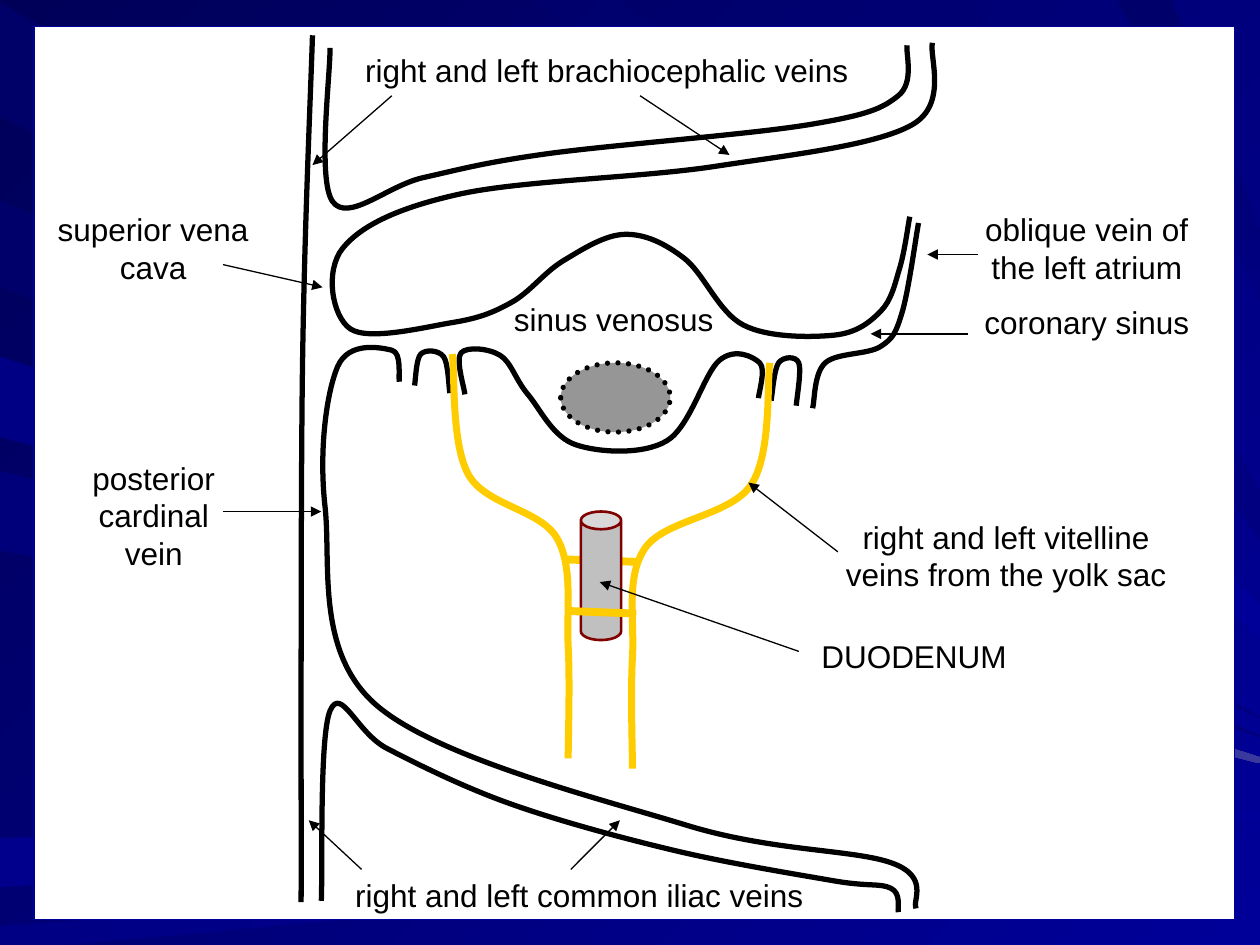
import pptx
import pptx.dml.color
import pptx.enum.dml
import pptx.enum.shapes
import pptx.enum.text
import pptx.oxml
import pptx.oxml.ns
import pptx.util
from pptx.util import Inches

SHAPE = pptx.enum.shapes.MSO_SHAPE
PAGE_BOX = (0, 0, 10, 7.5)
PANEL_BOX = (0.27, 0.21, 9.53, 7.09)
BLACK, VITELLINE = "000000", "FFCC00"

RAYS = [
    ("000069", "000080", 0, [(0, 0.02), (0, 0.93), (10, 5.7), (10, 5.69)]),
    ("00008C", "000099", 0, [(0, 6.65), (0, 7.04), (10, 6.51), (10, 6.43)]),
    ("000085", "000099", 0, [(0, 7.35), (0, 7.5), (0.54, 7.5), (10, 6.62)]),
    ("00006B", "000080", 0, [(0, 1.59), (0, 2.28), (10, 5.85), (10, 5.84)]),
    ("00006D", "000099", 45, [(4.26, 0), (4.92, 0), (10, 4.79), (10, 5.07)]),
    ("00006B", "000080", 90, [(8.87, 0), (9.3, 0), (10, 1.83), (10, 2.37)]),
    ("00007B", "000099", 45, [(0, 3.74), (0, 4.37), (10, 6.06), (10, 6.05)]),
    ("000073", "000080", 90, [(6.86, 0), (7.7, 0), (10, 3.9), (10, 4.28)]),
    ("000085", "39399E", 0, [(0, 2.83), (0, 3.47), (10, 6.06), (10, 6.01)]),
]

VESSEL_WALLS = [
    [(7.4, 0.34), (7.24, 0.99), (5.68, 1.32), (3.65, 1.54), (2.72, 1.97), (2.78, 2.61),
     (3.59, 2.56), (4.06, 2.4), (4.47, 2.07), (4.96, 1.86), (5.43, 2.05), (5.9, 2.58),
     (6.62, 2.66), (6.99, 2.47), (7.14, 2.13), (7.22, 1.72)],
    [(7.27, 7.21), (7.08, 6.85), (5.45, 6.55), (2.98, 5.59), (2.58, 4.02), (2.68, 2.91),
     (3.11, 2.78), (3.17, 3.03)],
    [(3.29, 3.06), (3.34, 2.81), (3.52, 2.83), (3.57, 3.12)],
    [(3.69, 3.13), (3.66, 2.8), (3.97, 2.82), (4.19, 3.13), (4.57, 3.53), (5.29, 3.5),
     (5.71, 2.86), (6.03, 2.88), (6.02, 3.16)],
    [(6.12, 3.18), (6.18, 2.88), (6.34, 2.88), (6.32, 3.22)],
    [(6.45, 3.24), (6.55, 2.88), (6.99, 2.75), (7.16, 2.48), (7.29, 1.77)],
    [(2.48, 0.28), (2.4, 2.96), (2.39, 7.16)],
    [(2.62, 0.38), (2.64, 1.6), (3.36, 1.41), (4.35, 1.22), (6.42, 0.99), (7.13, 0.76),
     (7.2, 0.36)],
    [(2.55, 7.15), (2.62, 5.64), (3.07, 5.94), (4.05, 6.38), (5.35, 6.75), (6.61, 6.99),
     (7.07, 7.05), (7.13, 7.24)],
]
LEFT_VITELLINE = [(4.51, 6.02), (4.51, 5.13), (4.42, 4.27), (3.72, 3.77), (3.59, 2.81)]
RIGHT_VITELLINE = [(5.02, 6.1), (5.02, 5.21), (5.12, 4.35), (5.96, 3.85), (6.11, 2.88)]

LABELS = [
    (["sinus venosus"], (3.98, 2.33, 1.89, 0.4), False),
    (["right and left brachiocephalic veins"], (2.8, 0.36, 4.1, 0.4), False),
    (["superior vena cava"], (0.27, 1.62, 1.89, 0.7), True),
    (["right and left common iliac veins"], (2.72, 6.9, 3.94, 0.4), False),
    (["oblique vein of the left atrium", "coronary sinus"], (7.6, 1.62, 2.05, 1.15), True),
    (["posterior\vcardinal vein"], (0.59, 3.59, 1.26, 1), True),
    (["right and left vitelline veins from the yolk sac"], (6.57, 4.06, 2.83, 0.7), True),
    (["DUODENUM"], (6.42, 5.01, 1.81, 0.4), False),
]
POINTERS = [
    (5.08, 0.76, 5.79, 1.23), (3.11, 0.76, 2.48, 1.31), (1.77, 2.1, 2.56, 2.28),
    (2.87, 6.9, 2.45, 6.51), (4.53, 6.9, 4.92, 6.51), (7.76, 2.02, 7.36, 2.02),
    (7.68, 2.65, 6.91, 2.65), (1.77, 4.06, 2.55, 4.06), (6.34, 5.17, 4.76, 4.62),
    (6.65, 4.38, 5.94, 3.83),
]


def colour(value):
    return pptx.dml.color.RGBColor.from_string(value)


def set_gradient(fill, first, last, angle):
    fill.gradient()
    fill.gradient_angle = 360 - angle
    for stop, value, position in zip(fill.gradient_stops, (first, last), (0, 1)):
        stop.color.rgb = colour(value)
        stop.position = position


def set_line(line, value, width):
    line.color.rgb = colour(value)
    line.width = pptx.util.Pt(width)


def add_outline(page, box, points, closed):
    places = [(Inches(box[0] + x), Inches(box[1] + y)) for x, y in points]
    builder = page.shapes.build_freeform(*places[0])
    builder.add_line_segments(places[1:], close=closed)
    shape = builder.convert_to_shape()
    shape.shadow.inherit = False
    return shape


def smooth_points(knots):
    padded = [knots[0], *knots, knots[-1]]
    points = [knots[0]]
    for before, start, end, after in zip(padded, padded[1:], padded[2:], padded[3:]):
        points.append(tuple(s + (e - b) / 6 for b, s, e in zip(before, start, end)))
        points.append(tuple(e - (a - s) / 6 for s, e, a in zip(start, end, after)))
        points.append(end)
    return points


def add_curve(page, box, knots, value, width):
    shape = add_outline(page, box, smooth_points(knots), False)
    shape.fill.background()
    set_line(shape.line, value, width)
    outline = shape.element.find(".//" + pptx.oxml.ns.qn("a:path"))
    segments = outline.findall(pptx.oxml.ns.qn("a:lnTo"))
    for start in range(0, len(segments), 3):
        curve = outline.makeelement(pptx.oxml.ns.qn("a:cubicBezTo"))
        outline.append(curve)
        for segment in segments[start:start + 3]:
            curve.append(segment[0])
            outline.remove(segment)


def add_line(page, box, ends, value, width, arrow=False):
    x1, y1, x2, y2 = ends
    line = page.shapes.add_connector(
        pptx.enum.shapes.MSO_CONNECTOR.STRAIGHT,
        Inches(box[0] + x1), Inches(box[1] + y1), Inches(box[0] + x2), Inches(box[1] + y2))
    set_line(line.line, value, width)
    properties = line.element.spPr
    if arrow:
        head = properties.makeelement(pptx.oxml.ns.qn("a:tailEnd"), {"type": "triangle"})
        properties.find(pptx.oxml.ns.qn("a:ln")).append(head)
    properties.append(properties.makeelement(pptx.oxml.ns.qn("a:effectLst")))


def add_solid(page, box, kind, place, fill, line, width):
    left, top, across, down = place
    shape = page.shapes.add_shape(
        kind, Inches(box[0] + left), Inches(box[1] + top), Inches(across), Inches(down))
    shape.shadow.inherit = False
    shape.fill.solid()
    shape.fill.fore_color.rgb = colour(fill)
    set_line(shape.line, line, width)
    return shape


def add_backdrop(page, box):
    set_gradient(page.background.fill, "000058", "000099", 45)
    for first, last, angle, corners in RAYS:
        ray = add_outline(page, box, corners, True)
        set_gradient(ray.fill, first, last, angle)
        ray.line.fill.background()
    add_solid(page, box, SHAPE.RECTANGLE, PANEL_BOX, "FFFFFF", "000099", 0.75)


def add_veins(page, box):
    for wall in VESSEL_WALLS:
        add_curve(page, box, wall, BLACK, 3)
    opening = add_solid(page, box, SHAPE.OVAL, (4.45, 2.88, 0.87, 0.55), "969696", BLACK, 3)
    opening.line.dash_style = pptx.enum.dml.MSO_LINE.ROUND_DOT
    opening.element.spPr.find(pptx.oxml.ns.qn("a:ln")).set("cap", "rnd")
    add_curve(page, box, LEFT_VITELLINE, VITELLINE, 4)
    add_line(page, box, (4.48, 4.44, 5.08, 4.46), VITELLINE, 4.5)
    add_curve(page, box, RIGHT_VITELLINE, VITELLINE, 4)
    duodenum = add_solid(page, box, SHAPE.CAN, (4.61, 4.06, 0.32, 1.02), "C0C0C0", "800000", 1.5)
    duodenum.adjustments[0] = 0.44
    add_line(page, box, (4.53, 4.85, 5.05, 4.87), VITELLINE, 4.5)


def add_labels(page, box):
    for texts, (left, top, across, down), centred in LABELS:
        label = page.shapes.add_textbox(
            Inches(box[0] + left), Inches(box[1] + top), Inches(across), Inches(down))
        frame = label.text_frame
        frame.word_wrap = True
        for index, text in enumerate(texts):
            para = frame.add_paragraph() if index else frame.paragraphs[0]
            para.text = text
            if index:
                para.space_before = pptx.util.Pt(10)
            if centred:
                para.alignment = pptx.enum.text.PP_ALIGN.CENTER
            para.font.name = "Arial"
            para.font.size = pptx.util.Pt(18)
            para.font.color.rgb = colour(BLACK)
    for ends in POINTERS:
        add_line(page, box, ends, BLACK, 0.75, arrow=True)


def main():
    deck = pptx.Presentation()
    deck.slide_width, deck.slide_height = Inches(PAGE_BOX[2]), Inches(PAGE_BOX[3])
    page = deck.slides.add_slide(deck.slide_layouts[6])
    for add_region in (add_backdrop, add_veins, add_labels):
        add_region(page, PAGE_BOX)
    deck.save("out.pptx")


if __name__ == "__main__":
    main()
